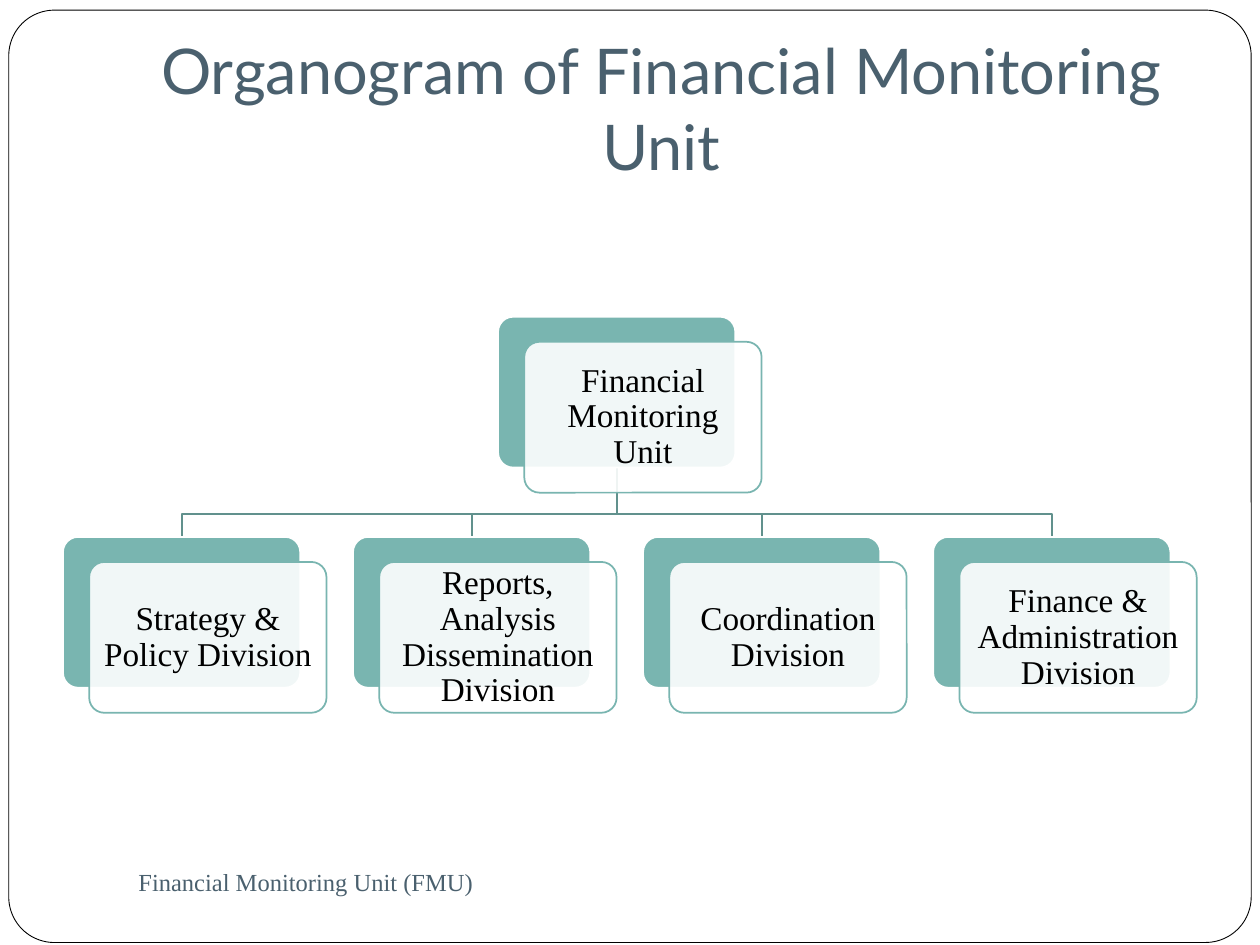
from dataclasses import dataclass

from lxml import etree
from pptx import Presentation
from pptx.dml.color import RGBColor
from pptx.enum.shapes import MSO_SHAPE
from pptx.enum.text import MSO_ANCHOR, MSO_AUTO_SIZE, PP_ALIGN
from pptx.oxml.ns import qn
from pptx.util import Pt

ROUNDED = MSO_SHAPE.ROUNDED_RECTANGLE
MIDDLE, BOTTOM = MSO_ANCHOR.MIDDLE, MSO_ANCHOR.BOTTOM
LEFT, CENTER = PP_ALIGN.LEFT, PP_ALIGN.CENTER
NO_AUTOFIT = MSO_AUTO_SIZE.NONE
TITLE_ONLY = 5

TITLE = "Organogram of Financial Monitoring Unit"
FOOTER = "Financial Monitoring Unit (FMU)"
ROOT = "Financial Monitoring Unit"
DIVISIONS = [
    "Strategy & Policy Division",
    "Reports, Analysis Dissemination Division",
    "Coordination Division",
    "Finance & Administration Division",
]


@dataclass(frozen=True)
class Theme:
    heading: str = "4A606E"
    teal: str = "79B5B0"
    branch: str = "61918D"
    white: str = "FFFFFF"
    black: str = "000000"
    heading_font: str = "Lato"
    body_font: str = "Times New Roman"
    title_size: float = 36
    footer_size: float = 14
    box_size: float = 19


THEME = Theme()

# Layout in points
FRAME = (5, 5.8, 710, 532.8)
TITLE_AREA = (72, 21.6, 612, 90)
FOOTER_AREA = (72, 486, 312, 36)
BOX_WIDTH, BOX_HEIGHT = 135.6, 86.2
CARD_SHIFT_X, CARD_SHIFT_Y = 15, 14.3
ROW_LEFT, ROW_STEP = 36, 165.75
ROOT_TOP, ROW_TOP = 181, 306.8
BRANCH_Y = 293.8


def points(values):
    return [Pt(value) for value in values]


def write(shape, text, font, size, color, align, anchor, margins, spacing=1.0):
    frame = shape.text_frame
    frame.text = text
    left, top, right, bottom = points(margins)
    formats = {
        "word_wrap": True, "auto_size": NO_AUTOFIT, "vertical_anchor": anchor,
        "margin_left": left, "margin_top": top,
        "margin_right": right, "margin_bottom": bottom,
    }
    for name, value in formats.items():
        setattr(frame, name, value)
    paragraph = frame.paragraphs[0]
    paragraph.alignment = align
    paragraph.line_spacing = spacing
    text_font = paragraph.runs[0].font
    text_font.name, text_font.size = font, Pt(size)
    text_font.color.rgb = RGBColor.from_string(color)


def outline(shape, color, width):
    shape.shadow.inherit = False
    shape.line.color.rgb = RGBColor.from_string(color)
    shape.line.width = Pt(width)


def add_rounded(slide, area, corner, line, width=1, fill=None, opacity=100):
    shape = slide.shapes.add_shape(ROUNDED, *points(area))
    shape.adjustments[0] = corner
    outline(shape, line, width)
    if fill is None:
        shape.fill.background()
        return shape
    shape.fill.solid()
    shape.fill.fore_color.rgb = RGBColor.from_string(fill)
    if opacity < 100:
        color = shape.fill._xPr.find(qn("a:solidFill"))[0]
        etree.SubElement(color, qn("a:alpha"), val=str(opacity * 1000))
    return shape


def add_branch(slide, root_left, division_left):
    """Draw the elbow line from the root box to a division box."""
    start, end = root_left + BOX_WIDTH / 2, division_left + BOX_WIDTH / 2
    route = [(start, ROOT_TOP + BOX_HEIGHT), (start, BRANCH_Y),
             (end, BRANCH_Y), (end, ROW_TOP)]
    corners = [points(corner) for corner in route]
    builder = slide.shapes.build_freeform(*corners[0])
    builder.add_line_segments(corners[1:], close=False)
    branch = builder.convert_to_shape()
    branch.fill.background()
    outline(branch, THEME.branch, 1)


def add_box(slide, left, top, text):
    """Draw a teal box with a translucent, captioned card in front."""
    add_rounded(slide, (left, top, BOX_WIDTH, BOX_HEIGHT), 0.1,
                THEME.white, fill=THEME.teal)
    card_area = (left + CARD_SHIFT_X, top + CARD_SHIFT_Y, BOX_WIDTH, BOX_HEIGHT)
    card = add_rounded(slide, card_area, 0.1, THEME.teal,
                       fill=THEME.white, opacity=90)
    write(card, text, THEME.body_font, THEME.box_size, THEME.black,
          CENTER, MIDDLE, (3.2, 3.2, 3.2, 3.2), spacing=0.9)


def main():
    presentation = Presentation()
    presentation.slide_width, presentation.slide_height = Pt(720), Pt(540)
    slide = presentation.slides.add_slide(presentation.slide_layouts[TITLE_ONLY])

    add_rounded(slide, FRAME, 0.049, THEME.black, width=0.5)

    title = slide.shapes.title
    title.left, title.top, title.width, title.height = points(TITLE_AREA)
    write(title, TITLE, THEME.heading_font, THEME.title_size, THEME.heading,
          CENTER, BOTTOM, (7.2, 3.6, 7.2, 7.2))

    footer = slide.shapes.add_textbox(*points(FOOTER_AREA))
    write(footer, FOOTER, THEME.body_font, THEME.footer_size, THEME.heading,
          LEFT, MIDDLE, (7.2, 3.6, 7.2, 3.6))

    division_lefts = [ROW_LEFT + index * ROW_STEP for index in range(len(DIVISIONS))]
    root_left = (division_lefts[0] + division_lefts[-1]) / 2
    for left in division_lefts:
        add_branch(slide, root_left, left)
    add_box(slide, root_left, ROOT_TOP, ROOT)
    for left, division in zip(division_lefts, DIVISIONS):
        add_box(slide, left, ROW_TOP, division)

    presentation.save("out.pptx")


if __name__ == "__main__":
    main()
